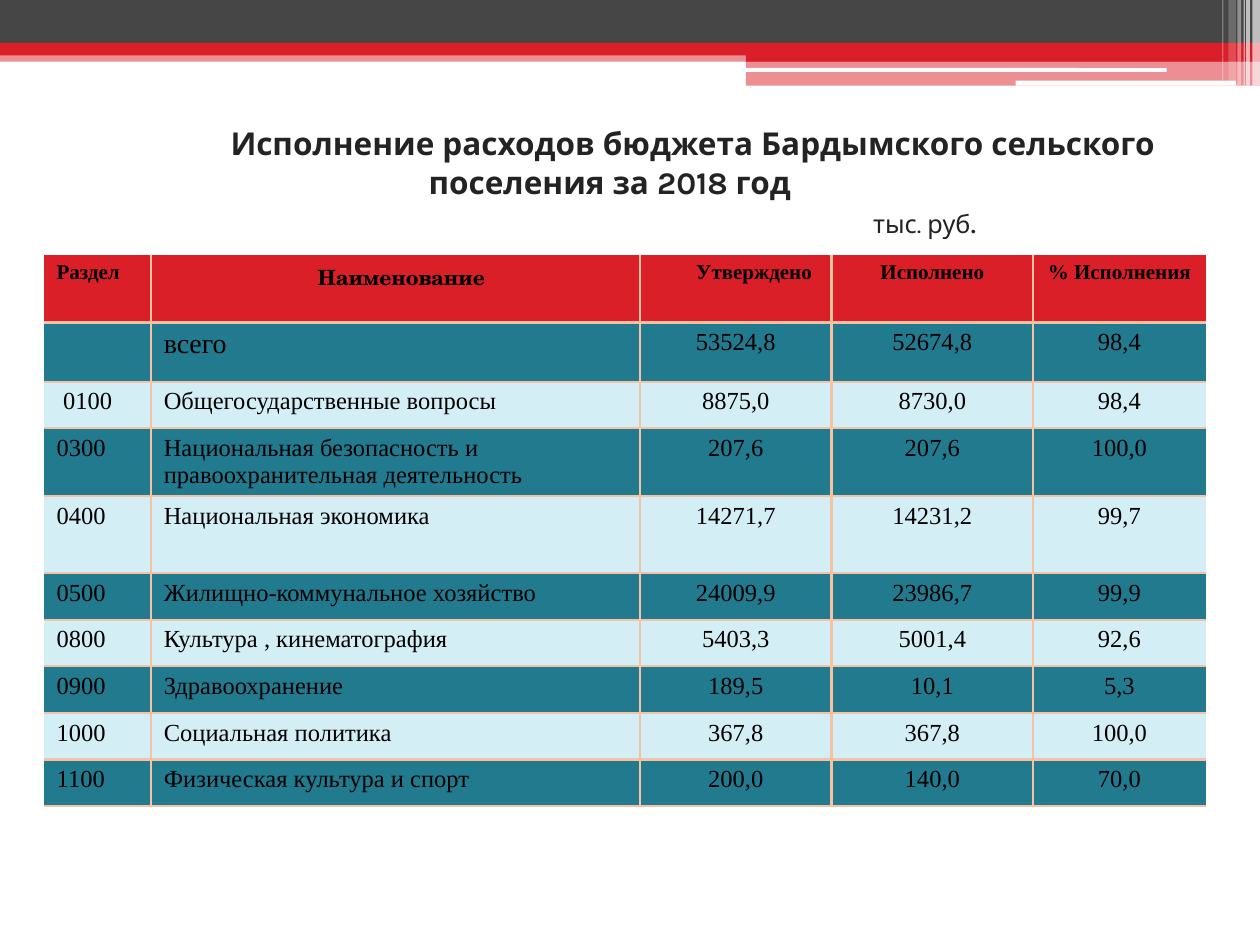
from lxml import etree
from pptx import Presentation
from pptx.dml.color import RGBColor
from pptx.enum.shapes import MSO_SHAPE
from pptx.enum.text import MSO_ANCHOR, MSO_AUTO_SIZE, PP_ALIGN
from pptx.oxml.ns import qn
from pptx.util import Inches, Pt

RECTANGLE = MSO_SHAPE.RECTANGLE
ROUNDED = MSO_SHAPE.ROUNDED_RECTANGLE
CENTER, LEFT = PP_ALIGN.CENTER, PP_ALIGN.LEFT
MIDDLE = MSO_ANCHOR.MIDDLE
NO_AUTOFIT = MSO_AUTO_SIZE.NONE

RED = RGBColor(0xDA, 0x1F, 0x28)
GRAY = RGBColor(0x46, 0x46, 0x46)
WHITE = RGBColor(0xFF, 0xFF, 0xFF)
BLACK = RGBColor(0x00, 0x00, 0x00)
TITLE_COLOR = RGBColor(0x23, 0x23, 0x23)
TEAL = RGBColor(0x22, 0x7A, 0x8F)
PALE_BLUE = RGBColor(0xD3, 0xEE, 0xF5)
BORDER = RGBColor(0xF7, 0xC1, 0xA4)

TITLE_FONT = "Karla"
TABLE_FONT = "Times New Roman"
NAME_FONT = "TeX Gyre Schola"

BANDS = [
    (RECTANGLE, 0, 0.4, 10, 0.09, RED, 50),
    (RECTANGLE, 0, 0, 10, 0.34, GRAY, 100),
    (RECTANGLE, 0, 0.34, 10, 0.1, RED, 100),
    (RECTANGLE, 5.92, 0.39, 4.08, 0.1, RED, 100),
    (RECTANGLE, 5.92, 0.48, 4.08, 0.2, RED, 50),
    (ROUNDED, 5.91, 0.54, 3.35, 0.03, WHITE, 100),
    (ROUNDED, 8.06, 0.64, 1.75, 0.04, WHITE, 100),
]
STRIPES = [
    (9.94, 0.06, 0.68, 65),
    (9.89, 0.03, 0.68, 65),
    (9.87, 0.01, 0.68, 60),
    (9.82, 0.03, 0.68, 40),
    (9.75, 0.06, 0.64, 20),
    (9.7, 0.01, 0.64, 30),
]

COLUMN_WIDTHS = [0.85, 3.88, 1.52, 1.6, 1.37]
ROW_HEIGHTS = [0.54, 0.47, 0.37, 0.54, 0.61] + [0.37] * 5
ROWS = [
    ("Раздел", "Наименование", "Утверждено", "Исполнено", "% Исполнения"),
    ("", "всего", "53524,8", "52674,8", "98,4"),
    ("0100", "Общегосударственные вопросы", "8875,0", "8730,0", "98,4"),
    ("0300", "Национальная безопасность и правоохранительная деятельность",
     "207,6", "207,6", "100,0"),
    ("0400", "Национальная экономика", "14271,7", "14231,2", "99,7"),
    ("0500", "Жилищно-коммунальное хозяйство", "24009,9", "23986,7", "99,9"),
    ("0800", "Культура , кинематография", "5403,3", "5001,4", "92,6"),
    ("0900", "Здравоохранение", "189,5", "10,1", "5,3"),
    ("1000", "Социальная политика", "367,8", "367,8", "100,0"),
    ("1100", "Физическая культура и спорт", "200,0", "140,0", "70,0"),
]
LEFT_MARGINS = {"Наименование": 0.19, "Утверждено": 0.39, "0100": 0.15}


def add_run(paragraph, text, font, size, color, bold=False):
    run = paragraph.add_run()
    run.text = text
    run.font.name = font
    run.font.size = Pt(size)
    run.font.color.rgb = color
    run.font.bold = bold


def add_band(slide, kind, left, top, width, height, color, opacity):
    shape = slide.shapes.add_shape(
        kind, Inches(left), Inches(top), Inches(width), Inches(height))
    shape.shadow.inherit = False
    shape.fill.solid()
    shape.fill.fore_color.rgb = color
    shape.line.fill.background()
    if opacity < 100:
        color_element = shape.fill._xPr.find(qn("a:solidFill"))[0]
        etree.SubElement(color_element, qn("a:alpha"), val=str(opacity * 1000))


def add_title(slide):
    title = slide.shapes.title
    title.left, title.top = Inches(0.35), Inches(0.92)
    title.width, title.height = Inches(8.98), Inches(0.94)
    frame = title.text_frame
    frame.word_wrap = True
    frame.auto_size = NO_AUTOFIT
    frame.vertical_anchor = MIDDLE
    frame.margin_top, frame.margin_bottom = Inches(0.1), 0

    heading = frame.paragraphs[0]
    heading.alignment = CENTER
    heading._p.get_or_add_pPr().set("indent", str(Inches(1.32)))
    add_run(heading,
            "Исполнение расходов бюджета Бардымского сельского поселения за 2018 год",
            TITLE_FONT, 18, TITLE_COLOR, True)

    unit = frame.add_paragraph()
    unit.alignment = LEFT
    unit._p.get_or_add_pPr().set("marL", str(Inches(6.48)))
    add_run(unit, "тыс. руб", TITLE_FONT, 14.4, TITLE_COLOR)
    add_run(unit, ".", TITLE_FONT, 18, TITLE_COLOR)

    for paragraph in frame.paragraphs:
        paragraph.line_spacing = Pt(22.3)
        paragraph.space_before = Pt(0)


def set_borders(cell, visible_sides):
    properties = cell._tc.get_or_add_tcPr()
    for side in "LRTB":
        line = etree.SubElement(properties, qn(f"a:ln{side}"), w=str(Pt(1.5)))
        if side in visible_sides:
            fill = etree.SubElement(line, qn("a:solidFill"))
            etree.SubElement(fill, qn("a:srgbClr"), val=str(BORDER))
        else:
            etree.SubElement(line, qn("a:noFill"))


def fill_cell(cell, text, row, column):
    sides = "B"
    if row > 0:
        sides += "T"
    if column > 0:
        sides += "L"
    if column < len(COLUMN_WIDTHS) - 1:
        sides += "R"
    set_borders(cell, sides)

    is_header = row == 0
    cell.fill.solid()
    cell.fill.fore_color.rgb = RED if is_header else TEAL if row % 2 else PALE_BLUE
    cell.margin_left = Inches(LEFT_MARGINS.get(text, 0.1))
    if not text:
        return
    paragraph = cell.text_frame.paragraphs[0]
    centered = column > 1 or (is_header and column == 1)
    paragraph.alignment = CENTER if centered else LEFT
    font = NAME_FONT if is_header and column == 1 else TABLE_FONT
    size = 12 if is_header else 16 if text == "всего" else 14
    add_run(paragraph, text, font, size, BLACK, is_header)


def add_budget_table(slide):
    table = slide.shapes.add_table(
        len(ROWS), len(COLUMN_WIDTHS), Inches(0.35), Inches(2.02),
        Inches(sum(COLUMN_WIDTHS)), Inches(sum(ROW_HEIGHTS))).table
    for column, width in zip(table.columns, COLUMN_WIDTHS):
        column.width = Inches(width)
    for row, height in zip(table.rows, ROW_HEIGHTS):
        row.height = Inches(height)
    for row, texts in enumerate(ROWS):
        for column, text in enumerate(texts):
            fill_cell(table.cell(row, column), text, row, column)


def main():
    presentation = Presentation()
    presentation.slide_width = Inches(10)
    presentation.slide_height = Inches(7.5)
    slide = presentation.slides.add_slide(presentation.slide_layouts[5])
    for band in BANDS:
        add_band(slide, *band)
    for left, width, height, opacity in STRIPES:
        add_band(slide, RECTANGLE, left, 0, width, height, WHITE, opacity)
    add_title(slide)
    add_budget_table(slide)
    presentation.save("out.pptx")


if __name__ == "__main__":
    main()
